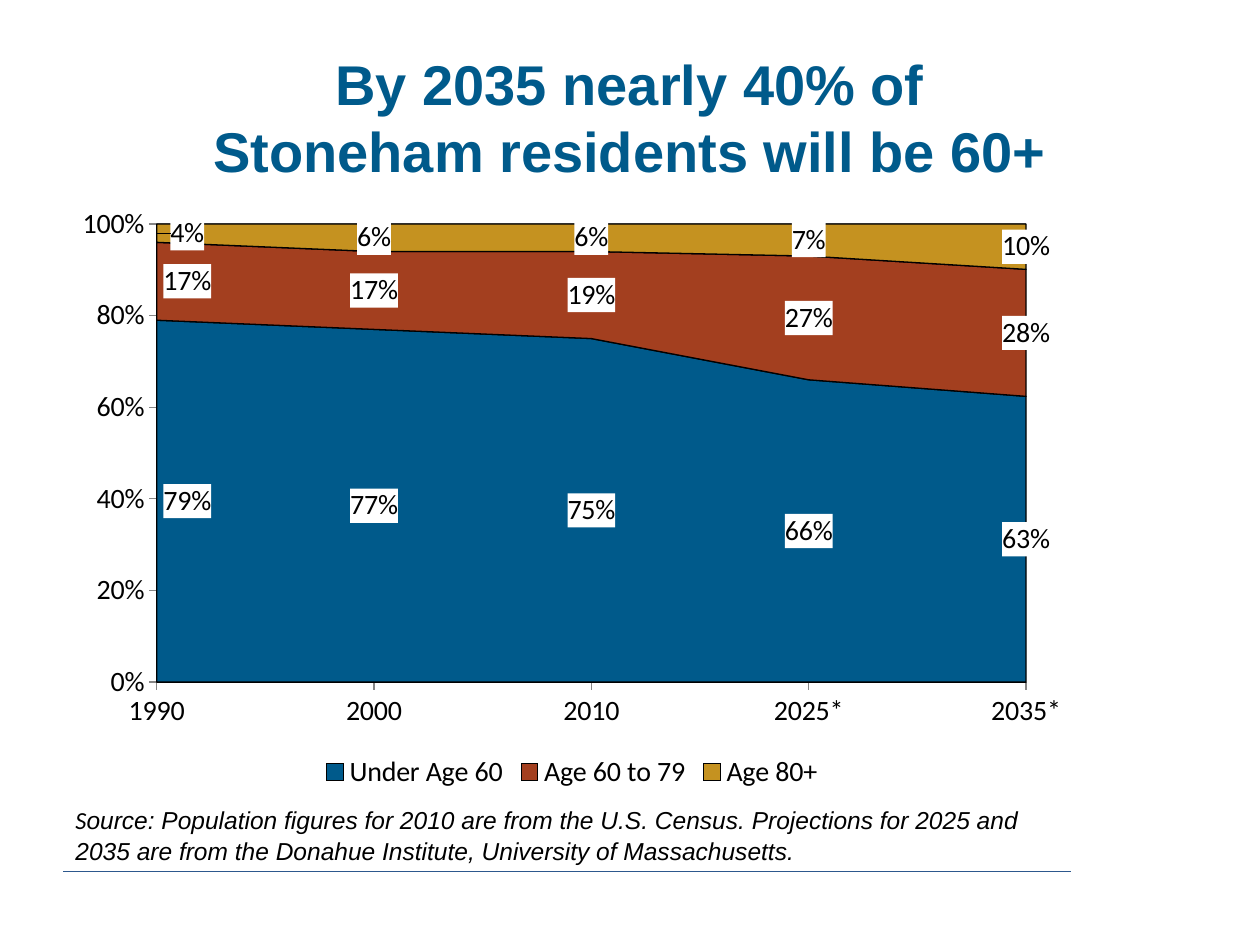
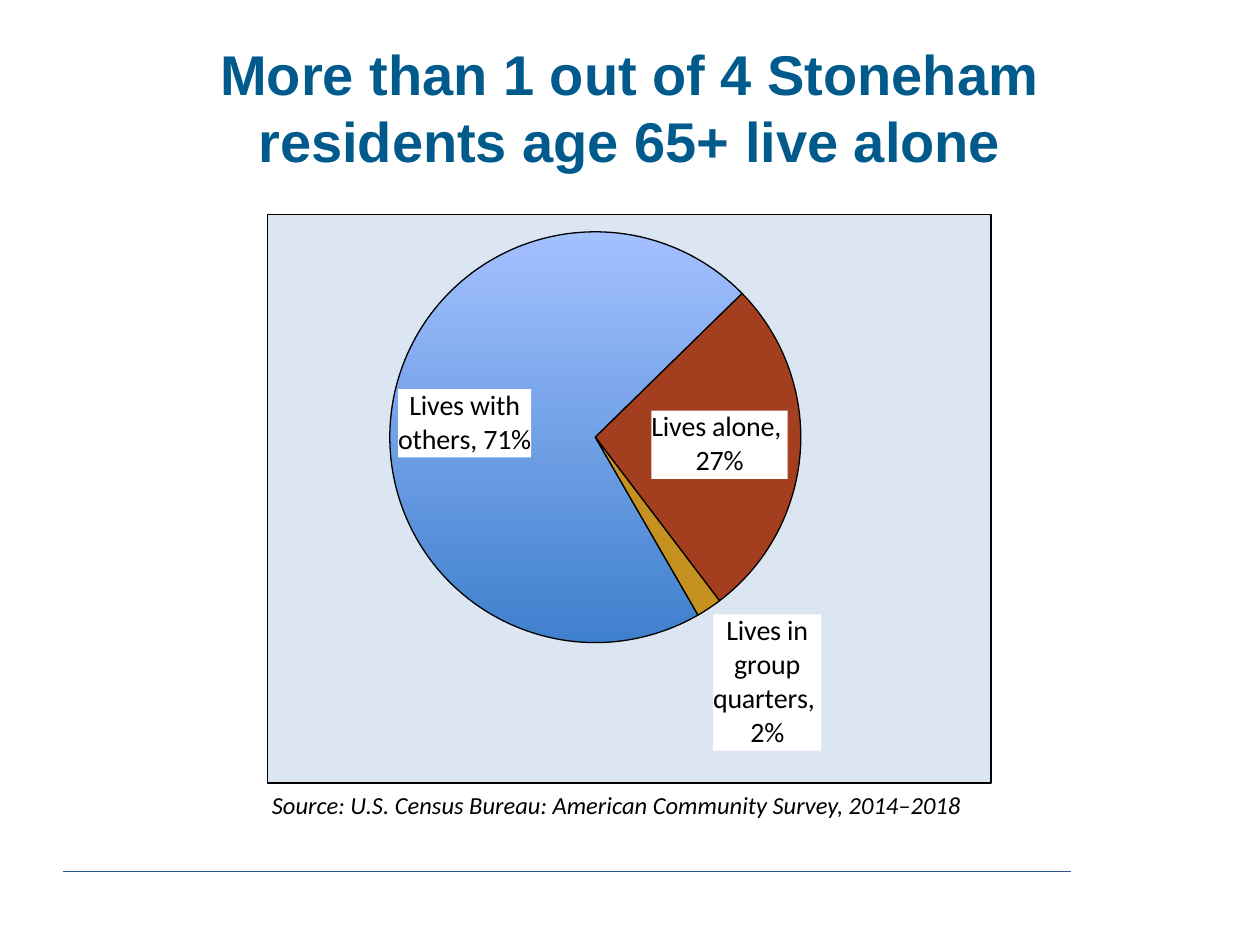
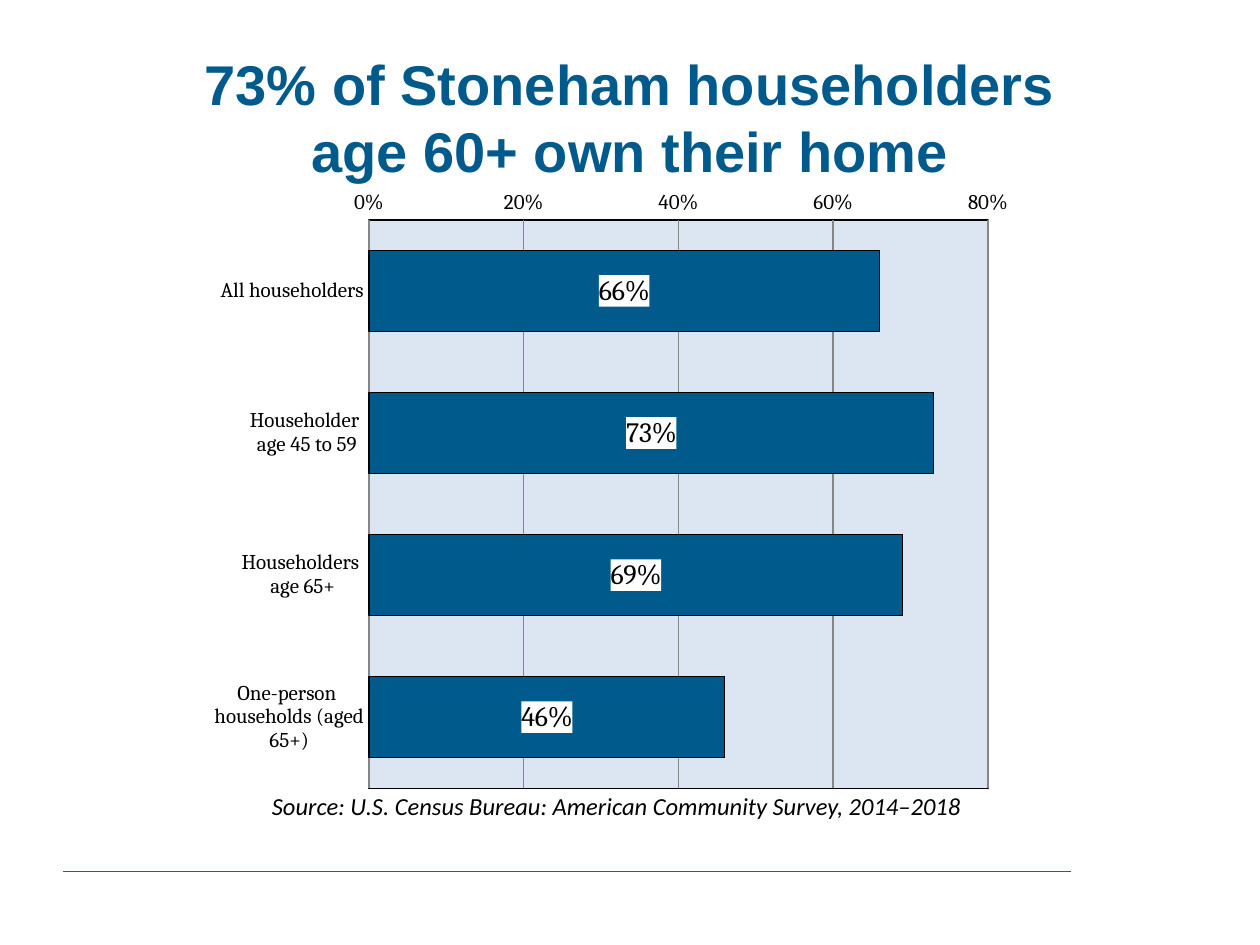
from dataclasses import dataclass
from typing import Optional

from lxml.etree import SubElement
from pptx import Presentation
from pptx.chart.data import CategoryChartData
from pptx.dml.color import RGBColor
from pptx.enum.chart import (XL_CHART_TYPE, XL_LABEL_POSITION, XL_LEGEND_POSITION,
                             XL_TICK_LABEL_POSITION, XL_TICK_MARK)
from pptx.enum.shapes import MSO_CONNECTOR
from pptx.enum.text import MSO_ANCHOR, PP_ALIGN
from pptx.oxml import parse_xml
from pptx.oxml.ns import nsdecls, qn
from pptx.util import Inches, Pt


@dataclass(frozen=True)
class Theme:
    blue: str = "005A8B"
    rust: str = "A33F1F"
    gold: str = "C59220"
    sky_top: str = "A3C0FF"
    sky_bottom: str = "3F80CD"
    panel: str = "DCE6F2"
    rule: str = "2D588D"
    grid: str = "868686"
    black: str = "000000"
    white: str = "FFFFFF"
    heading: str = "Arial"
    body: str = "Calibri"
    serif: str = "Cambria"
    title_size: float = 32
    source_size: float = 14
    label_size: float = 16
    small_size: float = 12
    outline: float = 0.75
    hairline: float = 0.5


THEME = Theme()
CELL = Inches(0.1)  # the slide is a grid of 100 columns and 75 rows
COLUMNS, ROWS = 100, 75


@dataclass(frozen=True)
class Area:
    """A rectangle in grid columns and rows, or in shares of a chart."""
    left: float
    top: float
    width: float
    height: float

    def on_grid(self) -> tuple:
        return tuple(round(side * CELL)
                     for side in (self.left, self.top, self.width, self.height))


@dataclass(frozen=True)
class Span:
    text: str
    font: str


@dataclass(frozen=True)
class ChartPlan:
    kind: XL_CHART_TYPE
    area: Area
    plot: Area
    categories: tuple
    series: dict
    font: str
    size: float


@dataclass(frozen=True)
class Slice:
    label: str
    position: XL_LABEL_POSITION
    shift: float
    color: Optional[str] = None


def color(value: str) -> RGBColor:
    return RGBColor.from_string(value)


# Text and the shared page frame

def add_text(page, area: Area, spans: list, *, size: float, ink: str = THEME.black,
             bold: bool = False, italic: bool = False, align=PP_ALIGN.LEFT,
             anchor=MSO_ANCHOR.TOP, spacing: float = 1.0) -> None:
    frame = page.shapes.add_textbox(*area.on_grid()).text_frame
    frame.word_wrap = True
    frame.vertical_anchor = anchor
    para = frame.paragraphs[0]
    para.alignment = align
    para.line_spacing = spacing
    for span in spans:
        for number, line in enumerate(span.text.split("\n")):
            if number:
                para.add_line_break()
            run = para.add_run()
            run.text = line
            run.font.name = span.font
            run.font.size = Pt(size)
            run.font.bold = bold
            run.font.italic = italic
            run.font.color.rgb = color(ink)


def add_page(deck, title: str, title_top: float = 3):
    page = deck.slides.add_slide(deck.slide_layouts[6])
    start, end, level = (round(place * CELL) for place in (5, 85, 69.2))
    rule = page.shapes.add_connector(MSO_CONNECTOR.STRAIGHT, start, level, end, level)
    rule.line.color.rgb = color(THEME.rule)
    rule.line.width = Pt(THEME.hairline)
    SubElement(rule._element.spPr, qn("a:effectLst"))
    add_text(page, Area(5, title_top, 90, 12.5), [Span(title, THEME.heading)],
             size=THEME.title_size, ink=THEME.blue, bold=True,
             align=PP_ALIGN.CENTER, anchor=MSO_ANCHOR.MIDDLE)
    return page


def add_source(page, area: Area, spans: list, spacing: float = 1.0) -> None:
    add_text(page, area, spans, size=THEME.source_size, italic=True, spacing=spacing)


# Chart helpers

def fill_properties(fill: str, line: Optional[str] = None):
    outline = (f'<a:ln w="{Pt(THEME.outline)}"><a:solidFill><a:srgbClr val="{line}"/>'
               '</a:solidFill></a:ln>' if line else "")
    return parse_xml(f'<c:spPr {nsdecls("c", "a")}><a:solidFill><a:srgbClr val="{fill}"/>'
                     f'</a:solidFill>{outline}</c:spPr>')


def manual_layout(shares: dict, inner: bool = False):
    target = '<c:layoutTarget val="inner"/>' if inner else ""
    modes = '<c:xMode val="edge"/><c:yMode val="edge"/>' if inner else ""
    values = "".join(f'<c:{key} val="{share}"/>' for key, share in shares.items())
    return parse_xml(f'<c:layout {nsdecls("c")}><c:manualLayout>{target}{modes}{values}'
                     '</c:manualLayout></c:layout>')


def back_with_white(label) -> None:
    followers = {qn("c:txPr"), qn("c:dLblPos"), qn("c:showLegendKey")}
    follower = next(child for child in label if child.tag in followers)
    follower.addprevious(fill_properties(THEME.white))


def shift_label(label, shift: float) -> None:
    label.find(qn("c:idx")).addnext(manual_layout({"x": shift, "y": 0}))


def outline_black(item) -> None:
    item.format.line.color.rgb = color(THEME.black)
    item.format.line.width = Pt(THEME.outline)


def paint(item, fill: str) -> None:
    item.format.fill.solid()
    item.format.fill.fore_color.rgb = color(fill)
    outline_black(item)


def add_chart(page, plan: ChartPlan):
    data = CategoryChartData(number_format="0%")
    data.categories = plan.categories
    for name, values in plan.series.items():
        data.add_series(name, values)
    chart = page.shapes.add_chart(plan.kind, *plan.area.on_grid(), data).chart
    chart.has_title = False
    chart.has_legend = False
    chart.font.name = plan.font
    chart.font.size = Pt(plan.size)
    chart.font.color.rgb = color(THEME.black)
    plot_area = chart._chartSpace.chart.plotArea
    for layout in plot_area.findall(qn("c:layout")):
        plot_area.remove(layout)
    plot = plan.plot
    shares = {"x": plot.left, "y": plot.top, "w": plot.width, "h": plot.height}
    plot_area.insert(0, manual_layout(shares, inner=True))
    return chart


def show_values(series, position=None) -> None:
    labels = series.data_labels
    labels.show_value = True
    labels.number_format = "0%"
    labels.number_format_is_linked = False
    labels.font.size = Pt(THEME.label_size)
    if position is not None:
        labels.position = position
    back_with_white(labels._element)


def style_axes(chart, tick: XL_TICK_MARK) -> None:
    for axis in (chart.category_axis, chart.value_axis):
        axis.major_tick_mark = tick
        axis.minor_tick_mark = XL_TICK_MARK.NONE
        axis.tick_label_position = XL_TICK_LABEL_POSITION.NEXT_TO_AXIS
        axis.format.line.color.rgb = color(THEME.grid)
    values = chart.value_axis
    values.minimum_scale = 0
    values.major_unit = 0.2
    values.has_major_gridlines = True
    values.major_gridlines.format.line.color.rgb = color(THEME.grid)
    values.tick_labels.number_format = "0%"
    values.tick_labels.number_format_is_linked = False


# Slides

CENSUS = [Span("Source: U.S. Census Bureau: American Community Survey, 2014–2018",
               THEME.body)]


def build_age_slide(deck) -> None:
    page = add_page(deck, "By 2035 nearly 40% of\nStoneham residents will be 60+")
    add_source(page, Area(5, 63.2, 80.8, 5.9), [
        Span("S", THEME.body),
        Span("ource: Population figures for 2010 are from the U.S. Census. Projections for "
             "2025 and 2035 are from the Donahue Institute, University of Massachusetts.",
             THEME.heading)], spacing=1.07)
    chart = add_chart(page, ChartPlan(
        XL_CHART_TYPE.AREA_STACKED_100, Area(5, 15.5, 80.8, 47.6),
        Area(0.092, 0.048, 0.854, 0.764), ("1990", "2000", "2010", "2025*", "2035*"),
        {"Under Age 60": (0.79, 0.77, 0.75, 0.66, 0.63),
         "Age 60 to 79": (0.17, 0.17, 0.19, 0.27, 0.28),
         "Age 80+": (0.04, 0.06, 0.06, 0.07, 0.10)}, THEME.body, THEME.label_size))
    style_axes(chart, XL_TICK_MARK.OUTSIDE)
    chart.value_axis.maximum_scale = 1
    chart.value_axis._element.find(qn("c:crossBetween")).set("val", "midCat")
    chart.has_legend = True
    chart.legend.position = XL_LEGEND_POSITION.BOTTOM
    chart.legend.include_in_layout = False
    chart.legend.font.size = Pt(THEME.label_size)
    for series, fill in zip(chart.plots[0].series, (THEME.blue, THEME.rust, THEME.gold)):
        paint(series, fill)
        show_values(series)
        # Keep the first label clear of the axis
        first = series.points[0].data_label
        first.font.size = Pt(THEME.label_size)
        label = first._get_or_add_dLbl()
        back_with_white(label)
        shift_label(label, 0.03)


def build_living_slide(deck) -> None:
    page = add_page(deck, "More than 1 out of 4 Stoneham\nresidents age 65+ live alone", 2.2)
    add_source(page, Area(20.6, 62.2, 66.3, 3.4), CENSUS)
    chart = add_chart(page, ChartPlan(
        XL_CHART_TYPE.PIE, Area(21.2, 17, 57.5, 45.2), Area(0.168, 0.03, 0.57, 0.723),
        ("1", "2", "3"), {"Series 1": (0.71, 0.27, 0.02)}, THEME.body, THEME.label_size))
    chart._chartSpace.find(qn("c:txPr")).addprevious(
        fill_properties(THEME.panel, THEME.black))
    plot = chart.plots[0]
    plot.vary_by_categories = True
    pie = plot._element
    angle = pie.find(qn("c:firstSliceAng"))
    if angle is None:
        angle = SubElement(pie, qn("c:firstSliceAng"))
    angle.set("val", "150")
    series = plot.series[0]
    show_values(series)
    slices = (
        Slice("Lives with others, 71%", XL_LABEL_POSITION.CENTER, -0.04),
        Slice("Lives alone, \n27%", XL_LABEL_POSITION.CENTER, 0.03, THEME.rust),
        Slice("Lives in group quarters, \n2%", XL_LABEL_POSITION.OUTSIDE_END, 0, THEME.gold))
    for number, part in enumerate(slices):
        point = series.points[number]
        if part.color:
            paint(point, part.color)
        else:
            fill = point.format.fill
            fill.gradient()
            fill.gradient_angle = 90
            for stop, shade in zip(fill.gradient_stops, (THEME.sky_bottom, THEME.sky_top)):
                stop.color.rgb = color(shade)
            outline_black(point)
        frame = point.data_label.text_frame
        frame.text = part.label
        for para in frame.paragraphs:
            for run in para.runs:
                run.font.size = Pt(THEME.label_size)
        point.data_label.position = part.position
        label = point.data_label._get_or_add_dLbl()
        back_with_white(label)
        if part.shift:
            shift_label(label, part.shift)


def build_owner_slide(deck) -> None:
    page = add_page(deck, "73% of Stoneham householders\nage 60+ own their home")
    add_source(page, Area(20.6, 62.3, 67, 3.4), CENSUS)
    chart = add_chart(page, ChartPlan(
        XL_CHART_TYPE.BAR_CLUSTERED, Area(15.7, 14.3, 65.6, 49.3),
        Area(0.207, 0.064, 0.749, 0.915),
        ("All householders", "Householder \nage 45 to 59", "Householders \nage 65+",
         "One-person \nhouseholds (aged 65+)"),
        {"Series 1": (0.66, 0.73, 0.69, 0.46)}, THEME.serif, THEME.small_size))
    style_axes(chart, XL_TICK_MARK.NONE)
    chart.category_axis.reverse_order = True
    chart.value_axis.maximum_scale = 0.8
    chart.value_axis.format.line.fill.background()
    chart._chartSpace.chart.plotArea.append(fill_properties(THEME.panel, THEME.black))
    plot = chart.plots[0]
    plot.vary_by_categories = False
    plot.gap_width = 75
    plot.overlap = -25
    paint(plot.series[0], THEME.blue)
    show_values(plot.series[0], XL_LABEL_POSITION.CENTER)


def main() -> None:
    deck = Presentation()
    deck.slide_width, deck.slide_height = COLUMNS * CELL, ROWS * CELL
    for build in (build_age_slide, build_living_slide, build_owner_slide):
        build(deck)
    deck.save("out.pptx")


if __name__ == "__main__":
    main()
